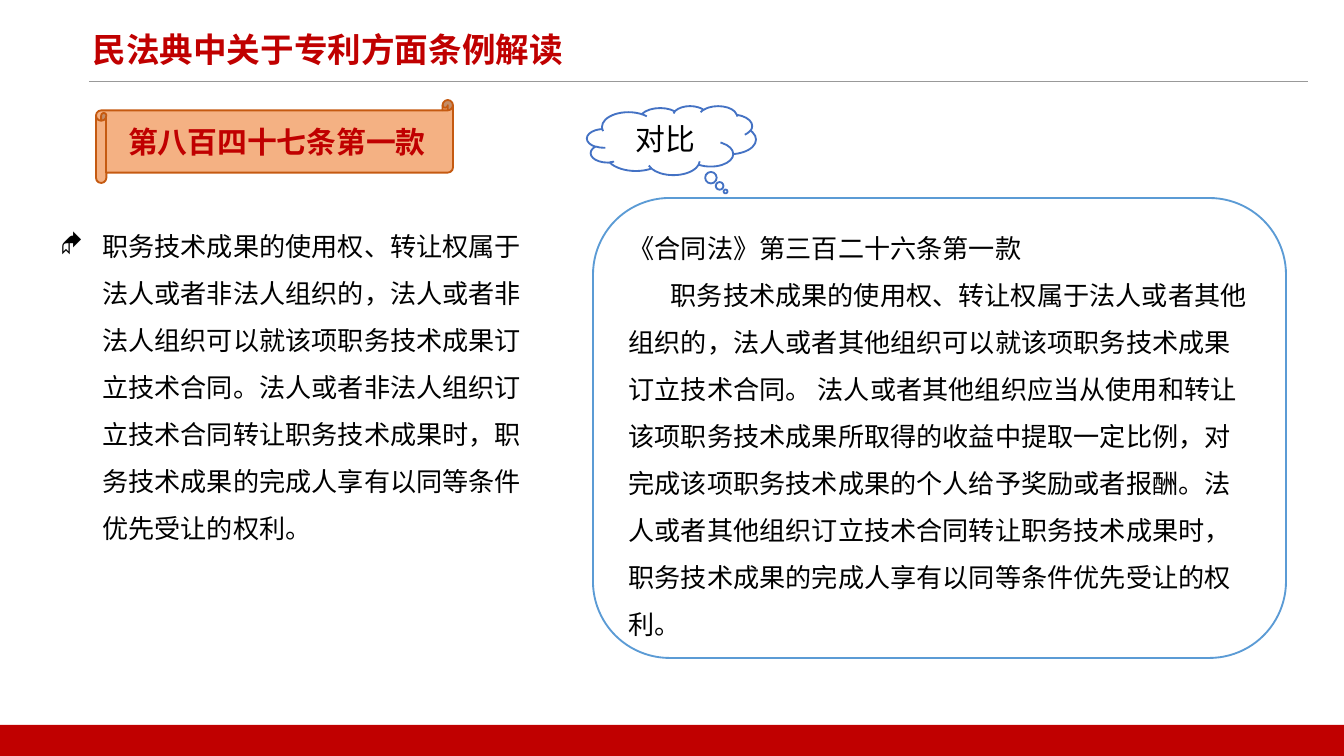
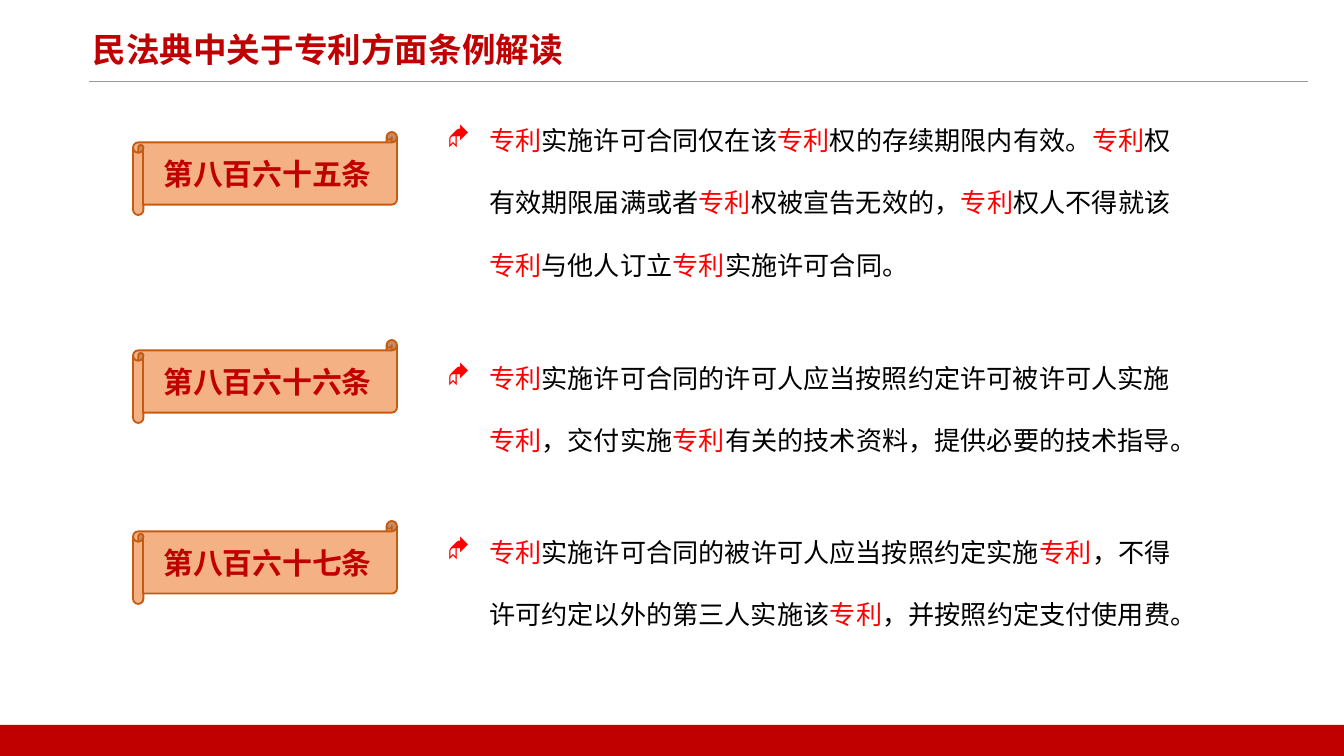
from lxml import etree
from pptx import Presentation
from pptx import util as u
from pptx.dml.color import RGBColor
from pptx.enum import shapes, text
from pptx.oxml.ns import qn

EMU_PER_PX = 914400 / 134.4
WIDTH, HEIGHT = 1344, 756
FONT = "Noto Sans CJK SC"
RED, BRIGHT_RED, BLACK, WHITE = "C00000", "FF0000", "000000", "FFFFFF"
SCROLL_FILL, SCROLL_LINE = "F4B183", "C55A11"
PANEL_LINE, CLOUD_LINE, RULE = "5B9BD5", "4472C4", "999999"
TITLE = "民法典中关于专利方面条例解读"
KEYWORD = "专利"
HANGING = 42

EMPLOYEE_CLAUSE = (
    "职务技术成果的使用权、转让权属于法人或者非法人组织的，法人或者非法人组织可以就该项职务技术成果"
    "订立技术合同。法人或者非法人组织订立技术合同转让职务技术成果时，职务技术成果的完成人享有以同等"
    "条件优先受让的权利。")
CONTRACT_LAW = [
    "《合同法》第三百二十六条第一款",
    "职务技术成果的使用权、转让权属于法人或者其他组织的，法人或者其他组织可以就该项职务技术成果订立"
    "技术合同。 法人或者其他组织应当从使用和转让该项职务技术成果所取得的收益中提取一定比例，对完成该项"
    "职务技术成果的个人给予奖励或者报酬。法人或者其他组织订立技术合同转让职务技术成果时，职务技术成果"
    "的完成人享有以同等条件优先受让的权利。"]
# article, scroll top, clause top, clause height, clause
ARTICLES = [
    ("第八百六十五条", 132, 86, 192,
     "专利实施许可合同仅在该专利权的存续期限内有效。专利权有效期限届满或者专利权被宣告无效的，"
     "专利权人不得就该专利与他人订立专利实施许可合同。"),
    ("第八百六十六条", 340, 324, 129,
     "专利实施许可合同的许可人应当按照约定许可被许可人实施专利，交付实施专利有关的技术资料，"
     "提供必要的技术指导。"),
    ("第八百六十七条", 521, 498, 129,
     "专利实施许可合同的被许可人应当按照约定实施专利，不得许可约定以外的第三人实施该专利，"
     "并按照约定支付使用费。"),
]


def px(value):
    return u.Emu(round(value * EMU_PER_PX))


def color(value):
    return RGBColor.from_string(value)


def format_span(span, size, hue, bold=False):
    font = span.font
    font.size, font.bold, font.name = u.Pt(size), bold, FONT
    font.color.rgb = color(hue)
    etree.SubElement(span._r.get_or_add_rPr(), qn("a:ea"), typeface=FONT)


def write(para, words, size, hue=BLACK, bold=False, align=text.PP_ALIGN.LEFT):
    para.text = words
    para.alignment = align
    for span in para.runs:
        format_span(span, size, hue, bold)


def write_highlighted(para, words, size):
    """Write words with every KEYWORD in bright red."""
    for index, piece in enumerate(words.split(KEYWORD)):
        parts = [(KEYWORD, BRIGHT_RED)] if index else []
        for content, hue in parts + [(piece, BLACK)]:
            if content:
                span = para.add_run()
                span.text = content
                format_span(span, size, hue)


def add_diamond(para):
    properties = para._p.get_or_add_pPr()
    properties.set("marL", str(px(HANGING)))
    properties.set("indent", str(-px(HANGING)))
    etree.SubElement(properties, qn("a:buFont"), typeface="Wingdings")
    etree.SubElement(properties, qn("a:buChar"), char="◆")


def add_shape(page, kind, left, top, width, height, fill=None, line=None):
    shape = page.shapes.add_shape(kind, px(left), px(top), px(width), px(height))
    shape.shadow.inherit = False
    if fill:
        shape.fill.solid()
        shape.fill.fore_color.rgb = color(fill)
    else:
        shape.fill.background()
    if line:
        shape.line.color.rgb = color(line)
        shape.line.width = u.Pt(1)
    else:
        shape.line.fill.background()
    shape.text_frame.vertical_anchor = text.MSO_ANCHOR.MIDDLE
    return shape


def add_scroll(page, left, top, width, label):
    scroll = add_shape(page, shapes.MSO_SHAPE.HORIZONTAL_SCROLL, left, top, width, 83,
                       SCROLL_FILL, SCROLL_LINE)
    write(scroll.text_frame.paragraphs[0], label, 16, RED, True, text.PP_ALIGN.CENTER)


def add_clause(page, left, top, width, height, words, spacing, highlighted=False):
    box = page.shapes.add_textbox(px(left), px(top), px(width), px(height))
    box.text_frame.word_wrap = True
    box.text_frame.auto_size = text.MSO_AUTO_SIZE.SHAPE_TO_FIT_TEXT
    para = box.text_frame.paragraphs[0]
    para.line_spacing = spacing
    add_diamond(para)
    if highlighted:
        write_highlighted(para, words, 14)
    else:
        write(para, words, 14)


def add_page(deck):
    """Add a page with the shared title, rule and bottom band."""
    page = deck.slides.add_slide(deck.slide_layouts[5])
    page.background.fill.solid()
    page.background.fill.fore_color.rgb = color(WHITE)

    rule = page.shapes.add_connector(shapes.MSO_CONNECTOR.STRAIGHT,
                                     px(89), px(82), px(1308), px(82))
    rule.line.color.rgb = color(RULE)
    rule.line.width = u.Pt(0.5)
    etree.SubElement(rule._element.spPr, qn("a:effectLst"))
    add_shape(page, shapes.MSO_SHAPE.RECTANGLE, 0, 725, WIDTH, HEIGHT - 725, RED)

    title = page.shapes.title
    title.left, title.top, title.width, title.height = px(79), px(27), px(1222), px(47)
    frame = title.text_frame
    frame.vertical_anchor = text.MSO_ANCHOR.TOP
    frame.auto_size = text.MSO_AUTO_SIZE.NONE
    write(frame.paragraphs[0], TITLE, 18, RED, True)
    frame.paragraphs[0].line_spacing = 0.9
    return page


def add_comparison(page):
    panel = add_shape(page, shapes.MSO_SHAPE.ROUNDED_RECTANGLE, 593, 198, 693, 460,
                      line=PANEL_LINE)
    frame = panel.text_frame
    frame.text = "\n".join(CONTRACT_LAW)
    for para, words in zip(frame.paragraphs, CONTRACT_LAW):
        write(para, words, 14)
        para.line_spacing = 1.5
    frame.paragraphs[1]._p.get_or_add_pPr().set("indent", str(px(HANGING)))

    cloud = add_shape(page, shapes.MSO_SHAPE.CLOUD_CALLOUT, 587, 106, 169, 69,
                      WHITE, CLOUD_LINE)
    cloud.adjustments[0], cloud.adjustments[1] = 0.32, 0.74
    write(cloud.text_frame.paragraphs[0], "对比", 16, align=text.PP_ALIGN.CENTER)


def main():
    deck = Presentation()
    deck.slide_width, deck.slide_height = px(WIDTH), px(HEIGHT)

    page = add_page(deck)
    add_scroll(page, 96, 100, 357, "第八百四十七条第一款")
    add_clause(page, 47, 208, 499, 339, EMPLOYEE_CLAUSE, 1.5)
    add_comparison(page)

    page = add_page(deck)
    for article, scroll_top, top, height, clause in ARTICLES:
        add_scroll(page, 133, scroll_top, 264, article)
        add_clause(page, 434, top, 770, height, clause, 2, highlighted=True)

    deck.save("out.pptx")


if __name__ == "__main__":
    main()
